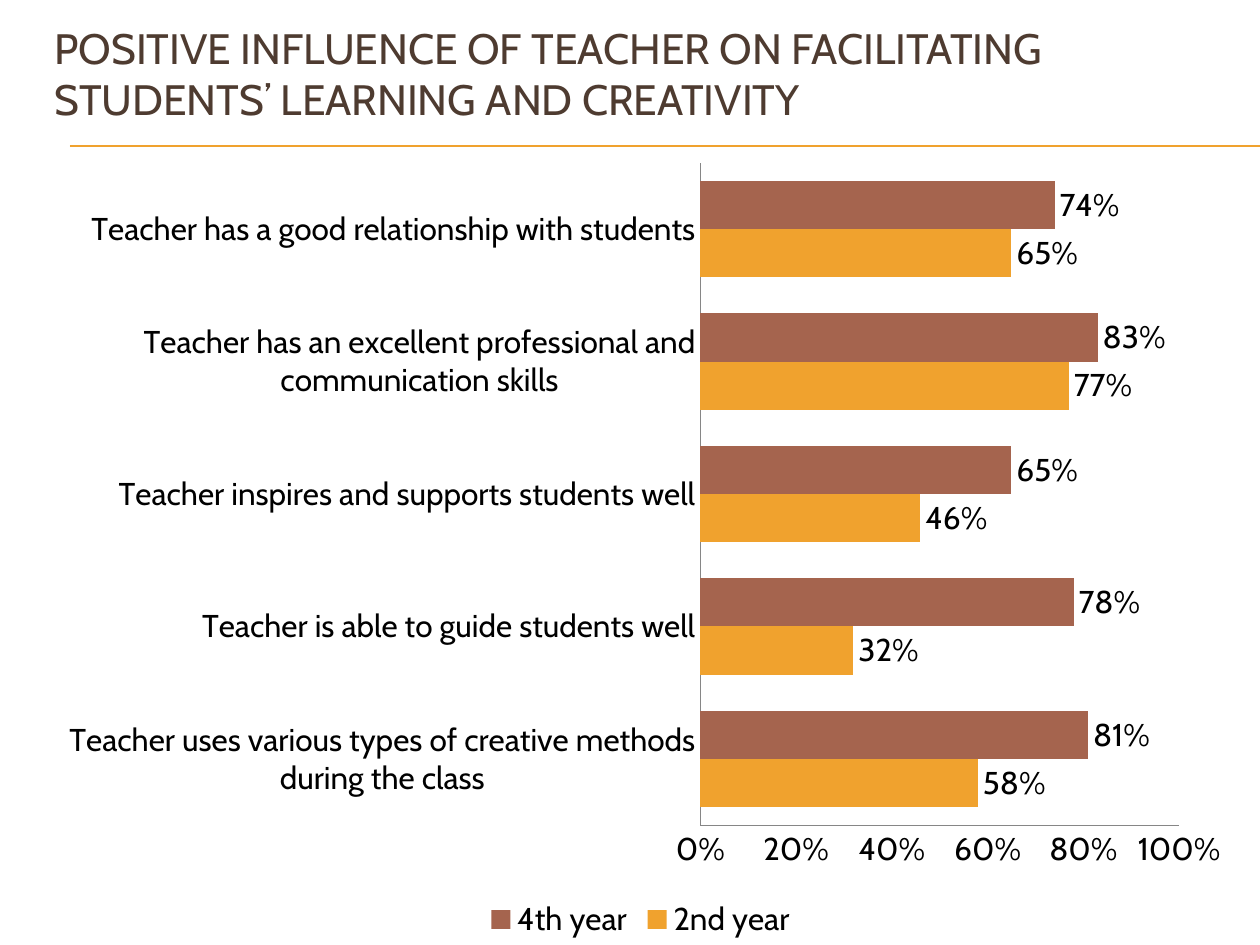
from dataclasses import dataclass

from lxml import etree
from pptx import Presentation
from pptx.chart.data import CategoryChartData
from pptx.dml.color import RGBColor
from pptx.enum.chart import (XL_CHART_TYPE, XL_LABEL_POSITION,
                             XL_LEGEND_POSITION, XL_TICK_MARK)
from pptx.enum.shapes import MSO_CONNECTOR
from pptx.enum.text import MSO_ANCHOR, PP_ALIGN
from pptx.oxml.ns import qn
from pptx.util import Pt

BAR = XL_CHART_TYPE.BAR_CLUSTERED
OUTSIDE = XL_LABEL_POSITION.OUTSIDE_END
BOTTOM = XL_LEGEND_POSITION.BOTTOM
NO_TICK = XL_TICK_MARK.NONE
STRAIGHT = MSO_CONNECTOR.STRAIGHT
MIDDLE = MSO_ANCHOR.MIDDLE
LEFT = PP_ALIGN.LEFT


@dataclass(frozen=True)
class Theme:
    font: str = "Cabin"
    title: str = "4E3B30"
    text: str = "000000"
    gold: str = "F0A22E"
    brown: str = "A5644E"
    axis: str = "868686"
    head: float = 24.3
    body: float = 18


THEME = Theme()
WIDTH, HEIGHT = 720, 540
PERCENT = "0%"

TITLE = ("POSITIVE INFLUENCE OF TEACHER ON FACILITATING "
         "STUDENTS’ LEARNING AND CREATIVITY")
GROUPS = [
    "Teacher uses various types of creative methods during the class",
    "Teacher is able to guide students well",
    "Teacher inspires and supports students well",
    "Teacher has an excellent professional and communication skills",
    "Teacher has a good relationship with students",
]
YEARS = [
    ("2nd year", THEME.gold, (0.58, 0.32, 0.46, 0.77, 0.65)),
    ("4th year", THEME.brown, (0.81, 0.78, 0.65, 0.83, 0.74)),
]


def rgb(code):
    return RGBColor.from_string(code)


def style(font, size=THEME.body, color=THEME.text):
    font.name = THEME.font
    font.size = Pt(size)
    font.bold = False
    font.color.rgb = rgb(color)


def write(frame, text, size=THEME.body, color=THEME.text, align=LEFT):
    frame.word_wrap = True
    para = frame.paragraphs[0]
    para.alignment = align
    run = para.add_run()
    run.text = text
    style(run.font, size, color)


def add_head(slide, left, top, width, height):
    title = slide.shapes.title
    title.left, title.top = Pt(left), Pt(top)
    title.width, title.height = Pt(width), Pt(height)
    frame = title.text_frame
    frame.vertical_anchor = MIDDLE
    frame.margin_bottom = Pt(22)
    write(frame, TITLE, size=THEME.head, color=THEME.title)


def add_rule(slide, left, top, right):
    """Draw the double gold line under the title."""
    for y in (top, top + 0.7):
        line = slide.shapes.add_connector(
            STRAIGHT, Pt(left), Pt(y), Pt(right), Pt(y))
        line.line.color.rgb = rgb(THEME.gold)
        line.line.width = Pt(0.75)
        etree.SubElement(line._element.spPr, qn("a:effectLst"))


def set_plot(chart, **box):
    """Fix the inner plot area, in fractions of the chart."""
    area = chart._chartSpace.chart.plotArea
    for old in area.findall(qn("c:layout")):
        area.remove(old)
    layout = etree.Element(qn("c:layout"))
    area.insert(0, layout)
    manual = etree.SubElement(layout, qn("c:manualLayout"))
    parts = {"layoutTarget": "inner", "xMode": "edge", "yMode": "edge", **box}
    for name, value in parts.items():
        etree.SubElement(manual, qn(f"c:{name}")).set("val", str(value))


def style_axis(axis):
    axis.has_major_gridlines = False
    axis.major_tick_mark = axis.minor_tick_mark = NO_TICK
    axis.format.line.color.rgb = rgb(THEME.axis)
    axis.format.line.width = Pt(0.75)
    style(axis.tick_labels.font)


def style_bars(series, color):
    series.format.fill.solid()
    series.format.fill.fore_color.rgb = rgb(color)
    series.invert_if_negative = False
    labels = series.data_labels
    labels.show_value = True
    labels.number_format = PERCENT
    labels.number_format_is_linked = False
    labels.position = OUTSIDE
    style(labels.font)


def add_bars(slide, left, top, width, height):
    data = CategoryChartData(number_format=PERCENT)
    data.categories = GROUPS
    for name, _, values in YEARS:
        data.add_series(name, values)
    chart = slide.shapes.add_chart(
        BAR, Pt(left), Pt(top), Pt(width), Pt(height), data).chart
    chart.has_title = False
    style(chart.font)
    set_plot(chart, x=0.55, y=0.02, w=0.4, h=0.83)

    plot = chart.plots[0]
    plot.gap_width, plot.overlap = 75, 0
    plot.vary_by_categories = False
    for series, (_, color, _) in zip(plot.series, YEARS):
        style_bars(series, color)

    style_axis(chart.category_axis)
    scale = chart.value_axis
    style_axis(scale)
    scale.minimum_scale, scale.maximum_scale = 0, 1
    scale.major_unit = 0.2
    scale.tick_labels.number_format = PERCENT
    scale.tick_labels.number_format_is_linked = False

    chart.has_legend = True
    chart.legend.position = BOTTOM
    chart.legend.include_in_layout = False
    style(chart.legend.font)


def main():
    deck = Presentation()
    deck.slide_width, deck.slide_height = Pt(WIDTH), Pt(HEIGHT)
    slide = deck.slides.add_slide(deck.slide_layouts[5])
    add_rule(slide, 40, 83, WIDTH)
    add_bars(slide, 24, 84, 684, 456)
    add_head(slide, 24, 0, 684, 102)
    deck.save("out.pptx")


if __name__ == "__main__":
    main()
